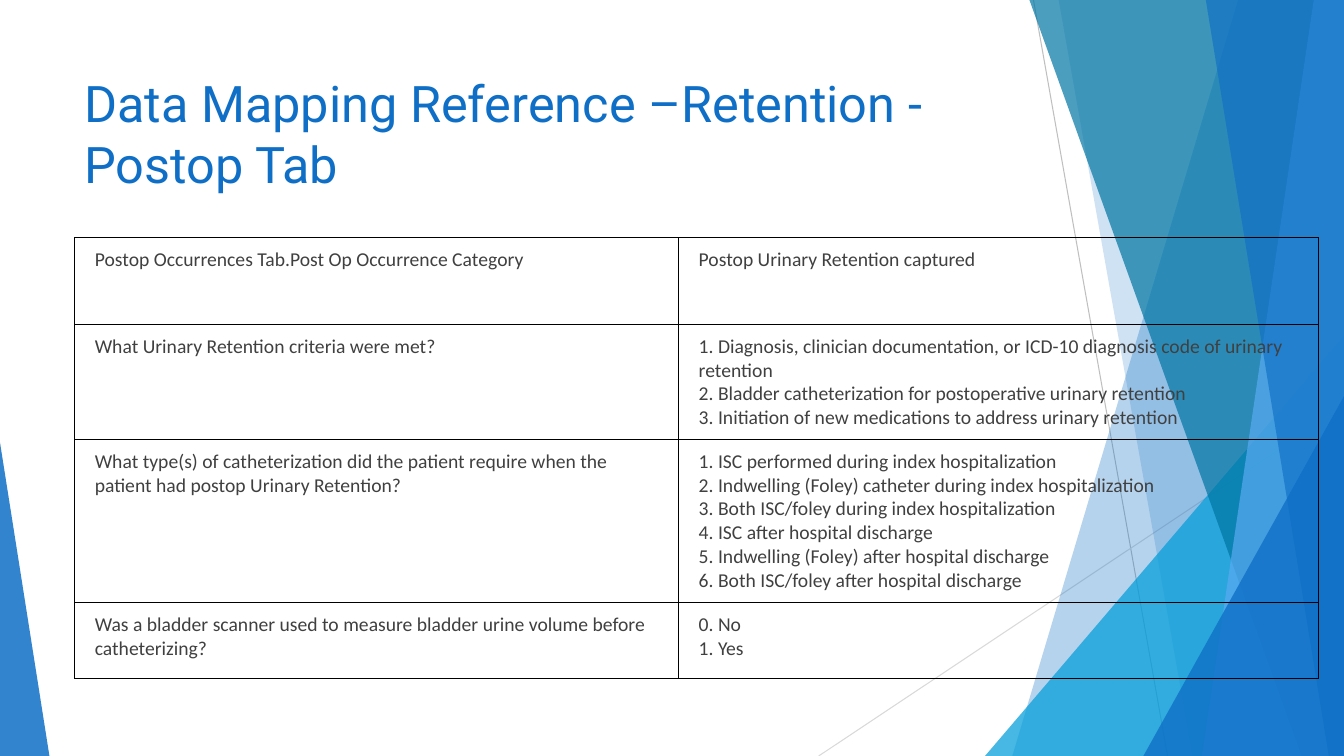
from dataclasses import dataclass

from lxml.etree import SubElement
from pptx import Presentation
from pptx.dml.color import RGBColor
from pptx.enum.shapes import MSO_CONNECTOR, MSO_SHAPE
from pptx.enum.text import MSO_ANCHOR
from pptx.oxml.ns import qn
from pptx.util import Inches, Pt

WIDTH, HEIGHT = 13.33, 7.5


@dataclass(frozen=True)
class Theme:
    blue: str = "0F6FC6"
    light_blue: str = "59AAF2"
    cyan: str = "009DD9"
    teal: str = "0076A3"
    text: str = "404040"
    border: str = "000000"
    gray: str = "BFBFBF"
    pale_gray: str = "D9D9D9"
    title_font: str = "Roboto"
    body_font: str = "Calibri"
    title_size: int = 36
    body_size: int = 14


class SlideBuilder:
    def __init__(self, slide, theme):
        self.shapes = slide.shapes
        self.theme = theme

    def style_font(self, paragraph, name, size, color):
        font = paragraph.font
        font.name, font.size = name, Pt(size)
        font.color.rgb = RGBColor.from_string(color)

    def style_shape(self, shape, color, opacity):
        shape.shadow.inherit = False
        shape.line.fill.background()
        shape.fill.solid()
        shape.fill.fore_color.rgb = RGBColor.from_string(color)
        color_element = shape.fill._xPr.find(f".//{qn('a:srgbClr')}")
        SubElement(color_element, qn("a:alpha"), val=str(opacity * 1000))

    def line(self, start, end, color):
        connector = self.shapes.add_connector(
            MSO_CONNECTOR.STRAIGHT, *map(Inches, start + end))
        connector.line.color.rgb = RGBColor.from_string(color)
        connector.line.width = Pt(0.75)
        SubElement(connector._element.spPr, qn("a:effectLst"))

    def band(self, top_x, bottom_x, color, opacity):
        corners = [(WIDTH, 0), (WIDTH, HEIGHT), (bottom_x, HEIGHT)]
        builder = self.shapes.build_freeform(Inches(top_x), 0)
        builder.add_line_segments([(Inches(x), Inches(y)) for x, y in corners])
        self.style_shape(builder.convert_to_shape(), color, opacity)

    def triangle(self, left, top, right, apex, color, opacity):
        shape = self.shapes.add_shape(
            MSO_SHAPE.ISOSCELES_TRIANGLE, Inches(left), Inches(top),
            Inches(right - left), Inches(HEIGHT - top))
        shape.adjustments[0] = apex
        self.style_shape(shape, color, opacity)

    def title(self, text, left, top, width, height):
        box = self.shapes.add_textbox(*map(Inches, (left, top, width, height)))
        frame = box.text_frame
        frame.word_wrap = True
        frame.vertical_anchor = MSO_ANCHOR.TOP
        frame.text = text
        self.style_font(frame.paragraphs[0], self.theme.title_font,
                        self.theme.title_size, self.theme.blue)

    def cell(self, cell, lines):
        cell.margin_left, cell.margin_right = Inches(0.2), Inches(0.15)
        cell.margin_top = cell.margin_bottom = Inches(0.1)
        cell.text = "\v".join(lines)
        self.style_font(cell.text_frame.paragraphs[0], self.theme.body_font,
                        self.theme.body_size, self.theme.text)
        properties = cell._tc.get_or_add_tcPr()
        for side in ("lnL", "lnR", "lnT", "lnB"):
            border = SubElement(properties, qn(f"a:{side}"), w=str(Pt(1)))
            fill = SubElement(border, qn("a:solidFill"))
            SubElement(fill, qn("a:srgbClr"), val=self.theme.border)
        cell.fill.background()

    def table(self, rows, left, top, widths, heights):
        table = self.shapes.add_table(
            len(rows), len(widths), Inches(left), Inches(top),
            Inches(sum(widths)), Inches(sum(heights))).table
        table.first_row = table.horz_banding = False
        for column, width in zip(table.columns, widths):
            column.width = Inches(width)
        for row, height, contents in zip(table.rows, heights, rows):
            row.height = Inches(height)
            for cell, lines in zip(row.cells, contents):
                self.cell(cell, lines)


MAPPING_ROWS = [
    (["Postop Occurrences Tab.Post Op Occurrence Category"],
     ["Postop Urinary Retention captured"]),
    (["What Urinary Retention criteria were met?"],
     ["1. Diagnosis, clinician documentation, or ICD-10 diagnosis code of urinary retention",
      "2. Bladder catheterization for postoperative urinary retention",
      "3. Initiation of new medications to address urinary retention"]),
    (["What type(s) of catheterization did the patient require when the "
      "patient had postop Urinary Retention?"],
     ["1. ISC performed during index hospitalization",
      "2. Indwelling (Foley) catheter during index hospitalization",
      "3. Both ISC/foley during index hospitalization",
      "4. ISC after hospital discharge",
      "5. Indwelling (Foley) after hospital discharge",
      "6. Both ISC/foley after hospital discharge"]),
    (["Was a bladder scanner used to measure bladder urine volume before catheterizing?"],
     ["0. No", "1. Yes"]),
]


def main():
    presentation = Presentation()
    presentation.slide_width = Inches(WIDTH)
    presentation.slide_height = Inches(HEIGHT)
    slide = presentation.slides.add_slide(presentation.slide_layouts[6])
    theme = Theme()
    builder = SlideBuilder(slide, theme)

    builder.line((10.25, 0), (11.58, HEIGHT), theme.gray)
    builder.line((WIDTH, 4.03), (8.12, HEIGHT), theme.pale_gray)
    builder.band(12.28, 10.04, theme.blue, 30)
    builder.band(10.5, 11.83, theme.blue, 20)
    builder.triangle(9.77, 3.33, WIDTH, 1, theme.cyan, 72)
    builder.band(10.21, 12.91, theme.teal, 70)
    builder.band(13.03, 11.92, theme.light_blue, 70)
    builder.band(11.96, 13.18, theme.blue, 65)
    builder.triangle(11.34, 3.93, WIDTH, 1, theme.blue, 80)
    builder.triangle(0, 4.39, 0.49, 0, theme.blue, 85)

    builder.title("Data Mapping Reference –Retention - Postop Tab", 0.74, 0.67, 9.4, 1.44)
    builder.table(MAPPING_ROWS, 0.74, 2.36, (5.99, 6.35), (0.86, 1.14, 1.62, 0.75))
    presentation.save("out.pptx")


if __name__ == "__main__":
    main()
